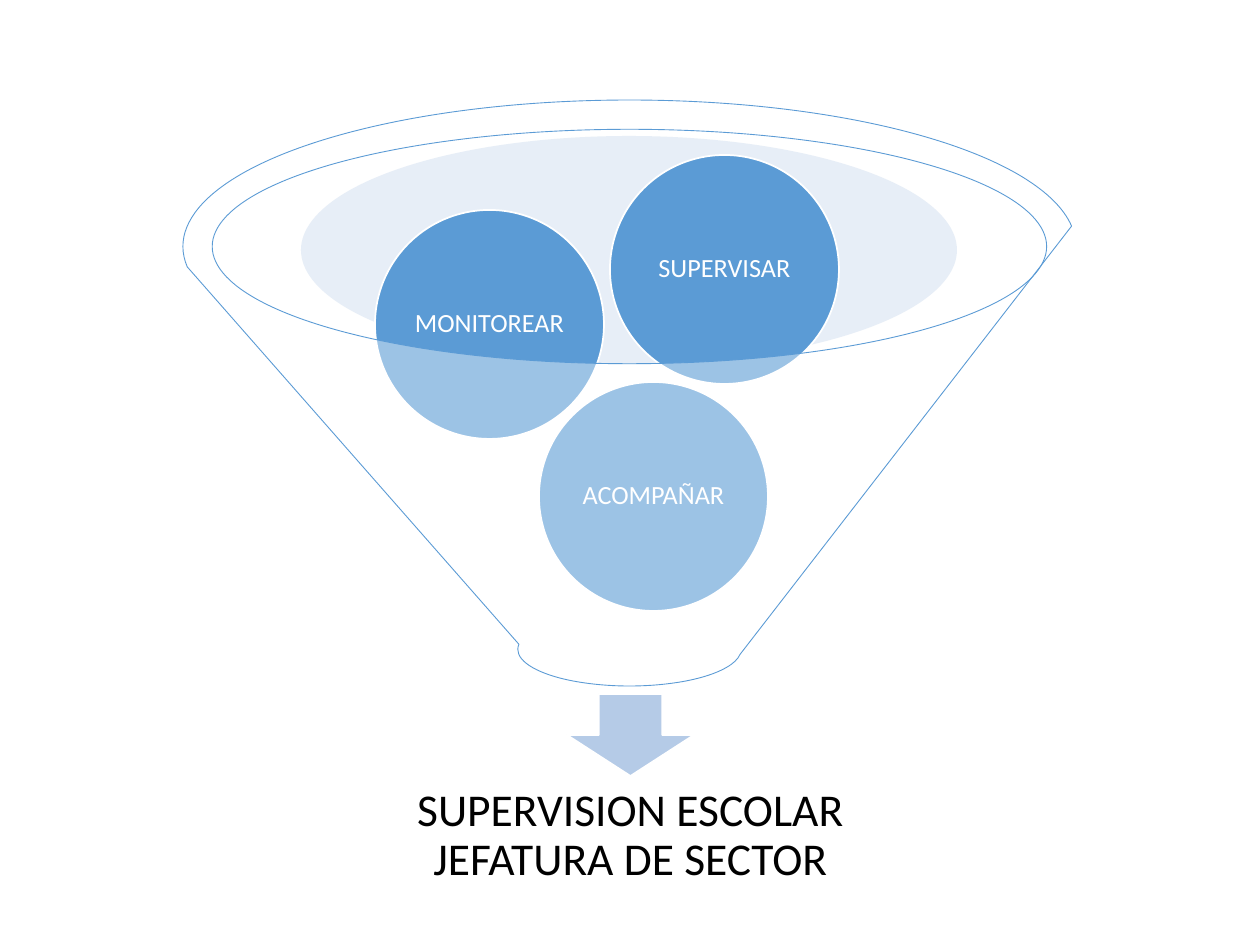
from dataclasses import dataclass

from lxml import etree
from pptx import Presentation
from pptx.dml.color import RGBColor
from pptx.enum.shapes import MSO_SHAPE
from pptx.enum.text import MSO_ANCHOR, PP_ALIGN
from pptx.oxml.ns import qn
from pptx.util import Pt

PX = 914400 / 126
OVAL, FUNNEL, DOWN_ARROW = MSO_SHAPE.OVAL, MSO_SHAPE.FUNNEL, MSO_SHAPE.DOWN_ARROW
MIDDLE, CENTER = MSO_ANCHOR.MIDDLE, PP_ALIGN.CENTER


@dataclass(frozen=True)
class Theme:
    font: str = "Calibri"
    blue: str = "5B9BD5"
    pale: str = "C4D5EB"
    arrow: str = "B5CBE7"
    white: str = "FFFFFF"
    black: str = "000000"
    task_size: int = 15
    result_size: int = 26


THEME = Theme()

prs = Presentation()
prs.slide_width, prs.slide_height = round(1260 * PX), round(945 * PX)
slide = prs.slides.add_slide(prs.slide_layouts[6])


def add_figure(kind, box, fill, line=None, width=1, opacity=None):
    """Add a preset shape; box is in px, opacity in percent."""
    figure = slide.shapes.add_shape(kind, *(round(v * PX) for v in box))
    figure.shadow.inherit = False
    figure.fill.solid()
    figure.fill.fore_color.rgb = RGBColor.from_string(fill)
    if opacity is not None:
        color = figure.fill._xPr.find(qn("a:solidFill"))[0]
        etree.SubElement(color, qn("a:alpha"), val=str(opacity * 1000))
    if line:
        figure.line.color.rgb = RGBColor.from_string(line)
        figure.line.width = Pt(width)
    else:
        figure.line.fill.background()
    return figure


def write_label(holder, text, size, color, inset):
    frame = holder.text_frame
    frame.word_wrap = True
    frame.vertical_anchor = MIDDLE
    frame.margin_left = frame.margin_right = round(inset * PX)
    frame.margin_top = frame.margin_bottom = round(inset * PX)
    frame.text = text
    paragraph = frame.paragraphs[0]
    paragraph.alignment = CENTER
    paragraph.line_spacing = 0.9
    font = paragraph.runs[0].font
    font.name, font.size = THEME.font, Pt(size)
    font.color.rgb = RGBColor.from_string(color)


# Funnel mouth, outlet arrow and result
add_figure(OVAL, (301, 136, 656, 228), THEME.pale, opacity=40)
add_figure(DOWN_ARROW, (567, 694, 127, 82), THEME.arrow, THEME.white)
result = slide.shapes.add_textbox(*(round(v * PX) for v in (325, 760, 611, 152)))
write_label(result, "SUPERVISION ESCOLAR JEFATURA DE SECTOR",
            THEME.result_size, THEME.black, inset=25)

# Tasks that go into the funnel
DIAMETER = 229
TASKS = [("ACOMPAÑAR", 539, 382), ("MONITOREAR", 375, 210), ("SUPERVISAR", 610, 155)]
for task, left, top in TASKS:
    ball = add_figure(OVAL, (left, top, DIAMETER, DIAMETER), THEME.blue, THEME.white)
    write_label(ball, task, THEME.task_size, THEME.white, inset=2)

# The translucent funnel lies over the tasks
add_figure(FUNNEL, (183, 100, 893, 586), THEME.white, THEME.blue, width=0.5, opacity=40)

prs.save("out.pptx")
